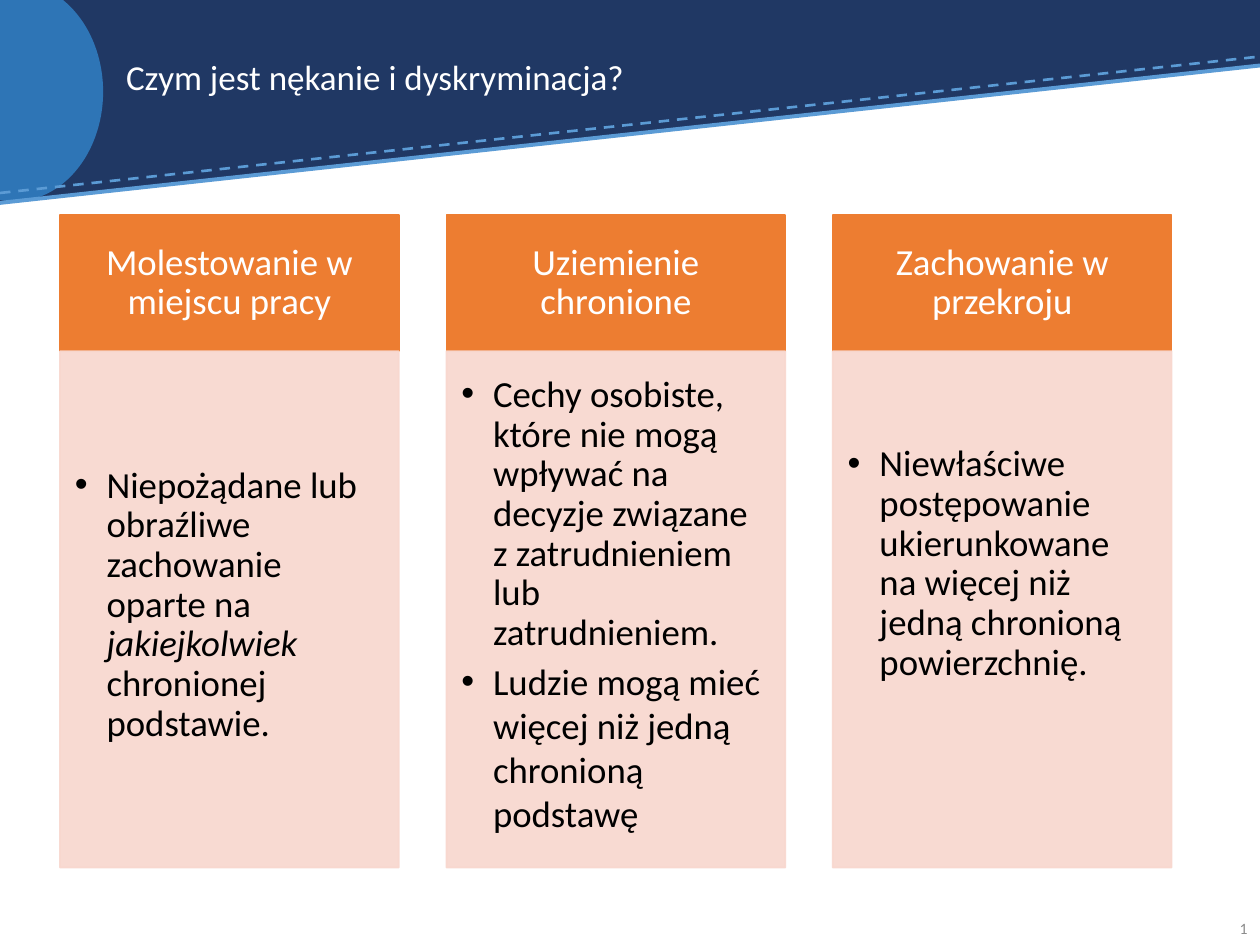
from lxml import etree
from pptx import Presentation
from pptx import util as u
from pptx.dml.color import RGBColor
from pptx.enum import dml, shapes, text
from pptx.oxml import ns

Cm, Pt = u.Cm, u.Pt
FONT = "Calibri"
HUES = {
    "navy": "203864", "blue": "2E75B6", "sky": "5B9BD5", "orange": "ED7D31",
    "rose": "F8D7CE", "white": "FFFFFF", "black": "000000", "grey": "8C8C8C",
}
LEFT, STEP, WIDTH = 1.21, 7.79, 6.83
TOP, HEAD, BODY = 4.34, 2.74, 10.41
COLS = [
    ("Molestowanie w miejscu pracy",
     [["Niepożądane lub obraźliwe zachowanie oparte na ", "*jakiejkolwiek ",
       "chronionej podstawie."]], 0.46),
    ("Uziemienie chronione",
     [["Cechy osobiste, które nie mogą wpływać na decyzje związane "
       "z zatrudnieniem lub zatrudnieniem."],
      ["Ludzie mogą mieć więcej niż jedną chronioną podstawę"]], 0.46),
    ("Zachowanie w przekroju",
     [["Niewłaściwe postępowanie ukierunkowane na więcej niż jedną "
       "chronioną powierzchnię."]], 2.13),
]


def hue(name):
    return RGBColor.from_string(HUES[name])


def add_sub(node, tag, **attrs):
    return etree.SubElement(node, ns.qn(tag), **attrs)


def style(par, size, color):
    par.font.name = FONT
    par.font.size = Pt(size)
    par.font.color.rgb = hue(color)


def set_frame(frame, pads):
    frame.word_wrap = True
    frame.auto_size = text.MSO_AUTO_SIZE.NONE
    frame.vertical_anchor = text.MSO_ANCHOR.MIDDLE
    (frame.margin_left, frame.margin_top,
     frame.margin_right, frame.margin_bottom) = [Cm(pad) for pad in pads]


def add_block(slide, kind, box, color, edge=False, alpha=None):
    block = slide.shapes.add_shape(kind, *[Cm(n) for n in box])
    block.shadow.inherit = False
    block.fill.solid()
    block.fill.fore_color.rgb = hue(color)
    if edge:
        block.line.width = Pt(1)
        block.line.color.rgb = hue(color)
    else:
        block.line.fill.background()
    if alpha:
        for tone in block._element.spPr.iter(ns.qn("a:srgbClr")):
            add_sub(tone, "a:alpha", val=str(alpha * 1000))
    return block


def add_line(slide, start, end, width, dash=None):
    line = slide.shapes.add_connector(
        shapes.MSO_CONNECTOR.STRAIGHT, Cm(0), Cm(start), Cm(25.4), Cm(end))
    line.line.color.rgb = hue("sky")
    line.line.width = Pt(width)
    if dash:
        line.line.dash_style = dash
    add_sub(line._element.spPr, "a:effectLst")


def add_banner(slide):
    kinds = shapes.MSO_SHAPE
    add_block(slide, kinds.RECTANGLE, (0, 0, 25.4, 1.32), "navy")
    wedge = add_block(slide, kinds.RIGHT_TRIANGLE, (0, 1.3, 25.4, 2.77), "navy")
    wedge._element.spPr.xfrm.set("flipV", "1")
    add_block(slide, kinds.OVAL, (-1.5, -0.36, 3.58, 4.42), "blue")
    add_line(slide, 3.89, 1.14, 1.5, dml.MSO_LINE.DASH)
    add_line(slide, 4.09, 1.32, 2.25)


def set_title(slide, words):
    title = slide.shapes.title
    slide.shapes._spTree.append(title._element)
    title.left, title.top = Cm(2.29), Cm(0.51)
    title.width, title.height = Cm(20.45), Cm(2.18)
    set_frame(title.text_frame, (0.25, 0.13, 0.25, 0.13))
    par = title.text_frame.paragraphs[0]
    par.text = words
    par.alignment = text.PP_ALIGN.LEFT
    par.line_spacing = 0.9
    style(par, 20, "white")


def add_number(slide, value):
    box = slide.shapes.add_textbox(Cm(24.05), Cm(18.21), Cm(1.35), Cm(1.02))
    set_frame(box.text_frame, (0.25, 0.13, 0.25, 0.13))
    par = box.text_frame.paragraphs[0]
    par.alignment = text.PP_ALIGN.RIGHT
    par.space_after = Pt(6)
    field = add_sub(par._p, "a:fld", type="slidenum",
                    id="{B6F15528-21DE-4FAA-801E-634DDDAF4B2B}")
    add_sub(field, "a:rPr", lang="pl-PL", sz="900")
    add_sub(field, "a:t").text = value
    style(par, 9, "grey")


def add_bullet(par, parts):
    props = par._p.get_or_add_pPr()
    props.set("marL", str(Cm(0.64)))
    props.set("indent", str(-Cm(0.64)))
    add_sub(props, "a:buFont", typeface="Arial")
    add_sub(props, "a:buChar", char="•")
    par.alignment = text.PP_ALIGN.LEFT
    par.space_after = Pt(3)
    style(par, 21, "black")
    for part in parts:
        run = par.add_run()
        run.text = part.lstrip("*")
        if part.startswith("*"):
            run.font.italic = True


def add_column(slide, left, name, points, base):
    rect = shapes.MSO_SHAPE.RECTANGLE
    head = add_block(slide, rect, (left, TOP, WIDTH, HEAD), "orange", True)
    set_frame(head.text_frame, (0.41, 0.23, 0.41, 0.23))
    par = head.text_frame.paragraphs[0]
    par.text = name
    par.alignment = text.PP_ALIGN.CENTER
    par.line_spacing = 0.9
    style(par, 21, "white")

    body = add_block(slide, rect, (left, TOP + HEAD, WIDTH, BODY),
                     "rose", True, 90)
    frame = body.text_frame
    set_frame(frame, (0.3, 0.3, 0.41, base))
    for i, parts in enumerate(points):
        par = frame.add_paragraph() if i else frame.paragraphs[0]
        add_bullet(par, parts)
    frame.paragraphs[0].line_spacing = 0.9


def main():
    deck = Presentation()
    deck.slide_width, deck.slide_height = Cm(25.4), Cm(19.05)
    slide = deck.slides.add_slide(deck.slide_layouts[5])
    add_banner(slide)
    set_title(slide, "Czym jest nękanie i dyskryminacja?")
    add_number(slide, "4")
    for i, col in enumerate(COLS):
        add_column(slide, LEFT + i * STEP, *col)
    deck.save("out.pptx")


if __name__ == "__main__":
    main()
